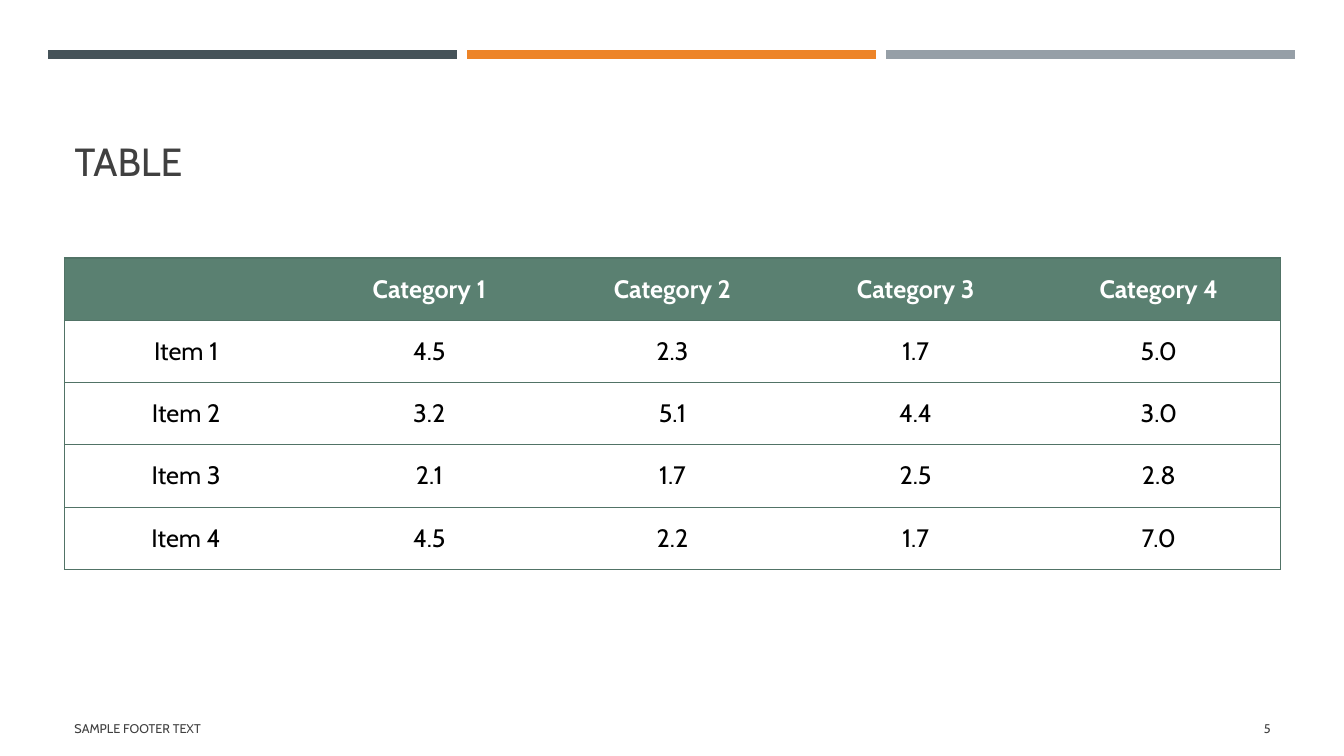
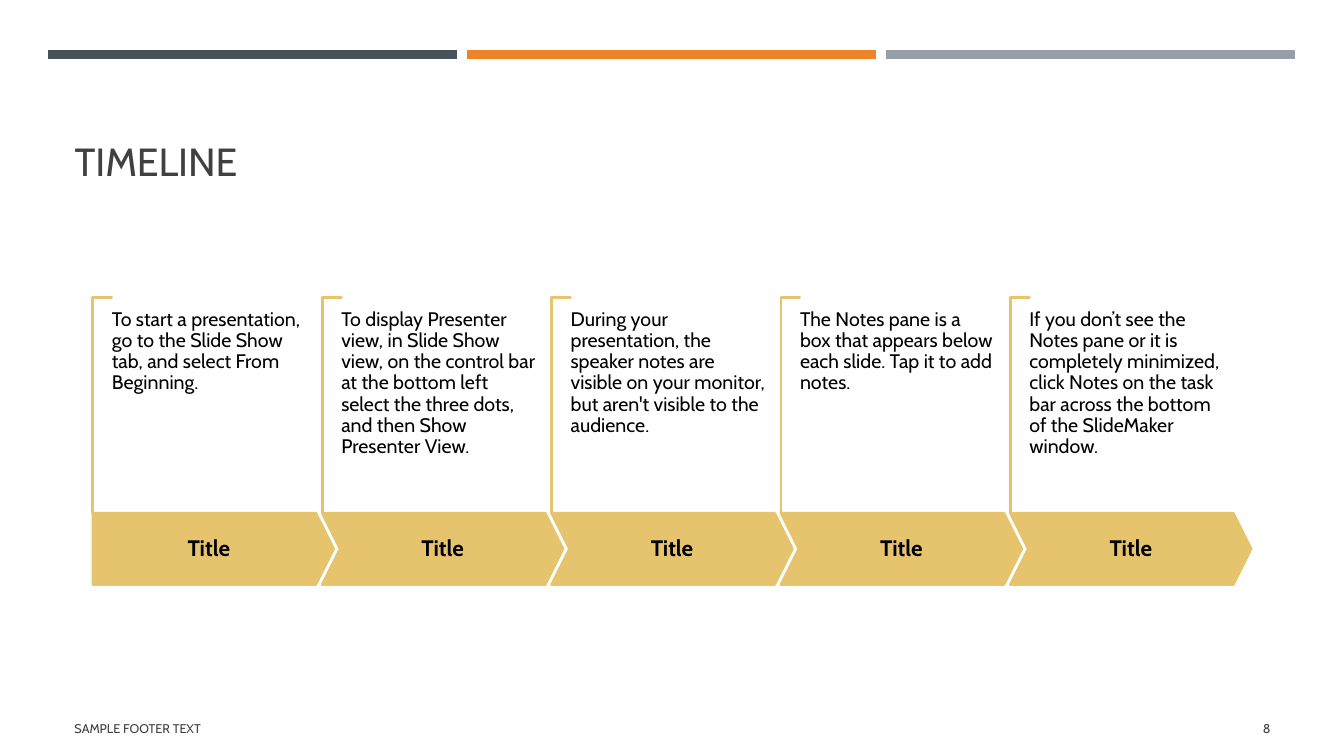
from lxml.etree import SubElement
from pptx import Presentation
from pptx.dml.color import RGBColor
from pptx.enum.shapes import MSO_CONNECTOR as CONN, MSO_SHAPE as SHAPE
from pptx.enum.text import MSO_ANCHOR as ANCHOR, PP_ALIGN as ALIGN
from pptx.oxml import parse_xml
from pptx.oxml.ns import nsdecls, qn
from pptx.util import Inches, Pt

SLATE = RGBColor(0x46, 0x53, 0x59)
ORANGE = RGBColor(0xED, 0x84, 0x28)
GREY = RGBColor(0x96, 0x9F, 0xA7)
GREEN = RGBColor(0x5A, 0x80, 0x71)
DARK_GREEN = RGBColor(0x51, 0x73, 0x66)
GOLD = RGBColor(0xE6, 0xC4, 0x6D)
INK = RGBColor(0x40, 0x40, 0x40)
BLACK = RGBColor(0, 0, 0)
WHITE = RGBColor(0xFF, 0xFF, 0xFF)
FONT = "Cabin"

BANDS_BOX = (0.48, 0.54, 12.36)
TITLE_BOX = (0.64, 0.8, 12.06, 1.08)
FOOTER_BOX = (0.64, 7.03, 7.56, 0.4)
NUMBER_BOX = (11.55, 7.03, 1.15, 0.4)
TABLE_BOX = (0.64, 2.56, 12.06, 3.09)
TIMELINE_BOX = (0.92, 2.95, 11.49, 2.85)

ROWS = [
    ("", "Category 1", "Category 2", "Category 3", "Category 4"),
    ("Item 1", "4.5", "2.3", "1.7", "5.0"),
    ("Item 2", "3.2", "5.1", "4.4", "3.0"),
    ("Item 3", "2.1", "1.7", "2.5", "2.8"),
    ("Item 4", "4.5", "2.2", "1.7", "7.0"),
]
STEPS = [
    "To start a presentation, go to the Slide Show tab, and select From Beginning.",
    "To display Presenter view, in Slide Show view, on the control bar at the "
    "bottom left select the three dots, and then Show Presenter View.",
    "During your presentation, the speaker notes are visible on your monitor, "
    "but aren't visible to the audience.",
    "The Notes pane is a box that appears below each slide. Tap it to add notes.",
    "If you don’t see the Notes pane or it is completely minimized, click Notes "
    "on the task bar across the bottom of the SlideMaker window.",
]


def set_attrs(obj, values):
    """Set every attribute named in a dict of format values."""
    for name, value in values.items():
        setattr(obj, name, value)


def write(tf, text, size, color, bold=False, align=ALIGN.LEFT, spacing=1.0,
          anchor=ANCHOR.MIDDLE, inset=None):
    """Put one formatted paragraph into a text frame."""
    set_attrs(tf, {"word_wrap": True, "vertical_anchor": anchor})
    if inset is not None:
        sides = ("left", "top", "right", "bottom")
        set_attrs(tf, {f"margin_{side}": Inches(inset) for side in sides})
    p = tf.paragraphs[0]
    set_attrs(p, {"alignment": align, "line_spacing": spacing})
    r = p.add_run()
    r.text = text
    set_attrs(r.font, {"name": FONT, "size": Pt(size), "bold": bold})
    r.font.color.rgb = color


def add_text(s, box, text, size, color, **style):
    """Add a text box that fills the given box."""
    tb = s.shapes.add_textbox(*map(Inches, box))
    write(tb.text_frame, text, size, color, **style)


def add_gold_shape(s, kind, box, fill, adjustments):
    """Add a gold-outlined preset shape."""
    sp = s.shapes.add_shape(kind, *map(Inches, box))
    sp.shadow.inherit = False
    sp.fill.solid()
    sp.fill.fore_color.rgb = fill
    sp.line.color.rgb = GOLD
    sp.line.width = Pt(1.75)
    for i, value in enumerate(adjustments):
        sp.adjustments[i] = value
    return sp


def add_bands(s, box):
    """Draw three equal colour bands across the box."""
    left, top, width = box
    band_w = 4.05
    pitch = (width - band_w) / 2
    for i, color in enumerate((SLATE, ORANGE, GREY)):
        x = left + i * pitch
        ends = map(Inches, (x, top, x + band_w, top))
        line = s.shapes.add_connector(CONN.STRAIGHT, *ends)
        line.line.color.rgb = color
        line.line.width = Pt(6.5)
        SubElement(line._element.spPr, qn("a:effectLst"))


def add_base_slide(prs, title, number):
    """Start a slide with its bands, title, footer and number."""
    s = prs.slides.add_slide(prs.slide_layouts[5])
    add_bands(s, BANDS_BOX)
    sp = s.shapes.title
    set_attrs(sp, dict(zip(("left", "top", "width", "height"), map(Inches, TITLE_BOX))))
    write(sp.text_frame, title, 28, INK, anchor=ANCHOR.BOTTOM)
    add_text(s, FOOTER_BOX, "SAMPLE FOOTER TEXT", 9, INK)
    add_text(s, NUMBER_BOX, str(number), 9, INK, align=ALIGN.RIGHT)
    return s


def set_borders(cell, visible):
    """Draw the named cell sides in dark green and hide the others."""
    tc_pr = cell._tc.get_or_add_tcPr()
    for i, side in enumerate("LRTB"):
        paint = "<a:noFill/>"
        if side in visible:
            paint = f'<a:solidFill><a:srgbClr val="{DARK_GREEN}"/></a:solidFill>'
        xml = f'<a:ln{side} {nsdecls("a")} w="{Pt(1)}">{paint}</a:ln{side}>'
        tc_pr.insert(i, parse_xml(xml))


def add_data_table(s, box, rows):
    """Add a ruled table with a green header row."""
    n_rows, n_cols = len(rows), len(rows[0])
    table = s.shapes.add_table(n_rows, n_cols, *map(Inches, box)).table
    table.horz_banding = False
    for i, row in enumerate(rows):
        for j, text in enumerate(row):
            cell = table.cell(i, j)
            header = i == 0
            cell.fill.solid()
            cell.fill.fore_color.rgb = GREEN if header else WHITE
            cell.vertical_anchor = ANCHOR.MIDDLE
            if text:
                write(cell.text_frame, text, 18, WHITE if header else BLACK,
                      bold=header, align=ALIGN.CENTER)
            set_borders(cell, "TB" + "L" * (j == 0) + "R" * (j == n_cols - 1))


def add_step(s, box, kind, text):
    """Add one timeline step: bracket, arrow with its title, description."""
    left, top, width, height = box
    arrow_h, tick = 0.71, 0.19
    stem = height - arrow_h
    bracket_box = (left + (tick - stem) / 2, top + (stem - tick) / 2, stem, tick)
    bracket = add_gold_shape(s, SHAPE.CORNER, bracket_box, WHITE, (0.01, 0.01))
    bracket.rotation = 90
    arrow_box = (left, top + stem, width, arrow_h)
    arrow = add_gold_shape(s, kind, arrow_box, GOLD, (0.25,))
    write(arrow.text_frame, "Title", 16, BLACK, bold=True,
          align=ALIGN.CENTER, spacing=0.9, inset=0)
    add_text(s, (left + tick, top + 0.12, 1.94, 1.91), text, 14, BLACK,
             spacing=0.9, anchor=ANCHOR.TOP, inset=0)


def add_timeline(s, box, steps):
    """Lay out the steps at an equal pitch across the box."""
    left, top, width, height = box
    step_w = 2.39
    pitch = (width - step_w) / (len(steps) - 1)
    for i, text in enumerate(steps):
        kind = SHAPE.CHEVRON if i else SHAPE.PENTAGON
        add_step(s, (left + i * pitch, top, step_w, height), kind, text)


def main():
    """Build and save the two slides."""
    prs = Presentation()
    set_attrs(prs, {"slide_width": Inches(13.33), "slide_height": Inches(7.5)})
    add_data_table(add_base_slide(prs, "TABLE", 5), TABLE_BOX, ROWS)
    add_timeline(add_base_slide(prs, "TIMELINE", 8), TIMELINE_BOX, STEPS)
    prs.save("out.pptx")


if __name__ == "__main__":
    main()
